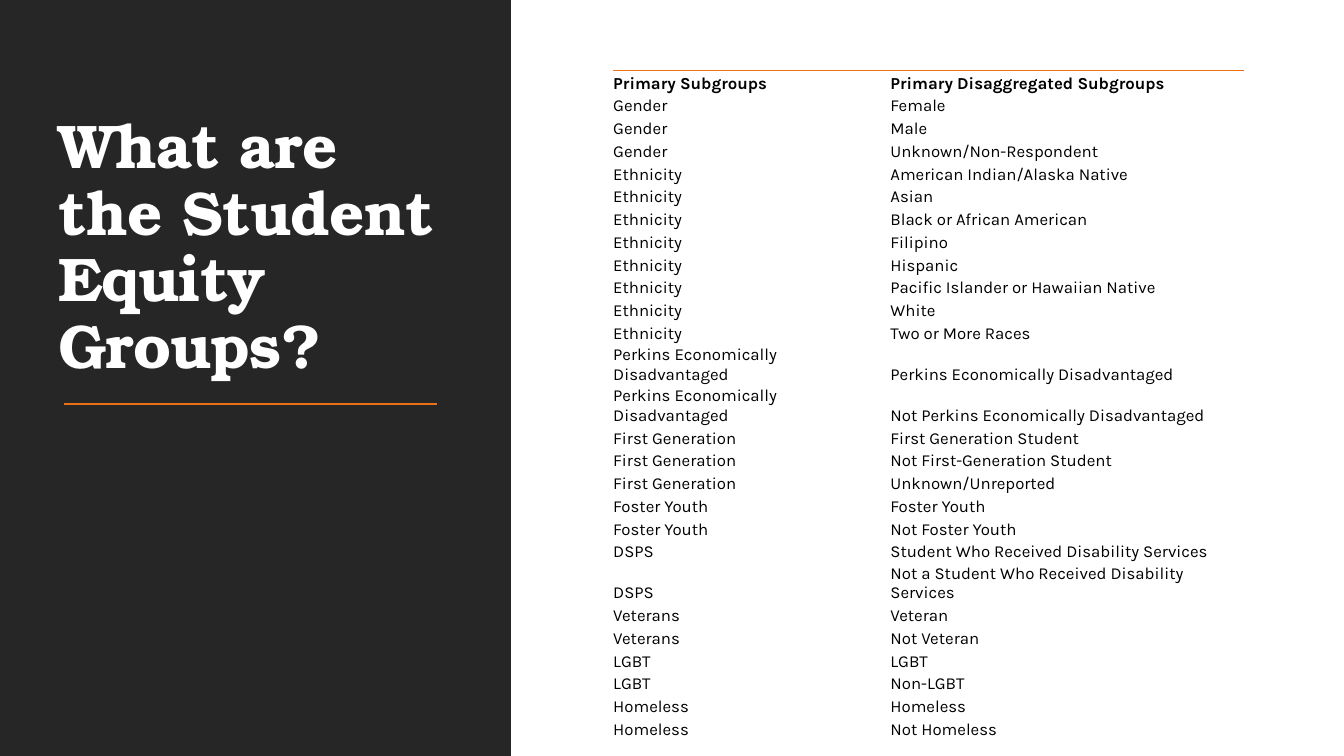
from dataclasses import dataclass

from lxml import etree
from pptx import Presentation
from pptx.dml.color import RGBColor
from pptx.enum.shapes import MSO_CONNECTOR, MSO_SHAPE
from pptx.enum.text import MSO_ANCHOR
from pptx.oxml.ns import qn
from pptx.slide import Slide
from pptx.table import _Cell
from pptx.text.text import _Paragraph
from pptx.util import Pt

STRAIGHT = MSO_CONNECTOR.STRAIGHT
RECTANGLE = MSO_SHAPE.RECTANGLE
BOTTOM = MSO_ANCHOR.BOTTOM

EMU_PER_PX = 6350
PAGE_WIDTH, PAGE_HEIGHT = 1920, 1080
CHARCOAL, ORANGE, WHITE, BLACK = "262626", "EC7016", "FFFFFF", "000000"
PLAIN_TABLE_STYLE = "{2D5ABB26-0587-4C30-8999-92F81FD0307C}"


@dataclass(frozen=True)
class Font:
    name: str
    size: int
    color: str
    bold: bool = False


@dataclass(frozen=True)
class Group:
    name: str
    members: tuple[str, ...]


TITLE_FONT = Font("TeX Gyre Bonum", 44, WHITE, True)
HEADER_FONT = Font("Karla", 12, BLACK, True)
BODY_FONT = Font("Karla", 12, BLACK)

HEADER = ("Primary Subgroups", "Primary Disaggregated Subgroups")
GROUPS = (
    Group("Gender", ("Female", "Male", "Unknown/Non-Respondent")),
    Group("Ethnicity", (
        "American Indian/Alaska Native",
        "Asian",
        "Black or African American",
        "Filipino",
        "Hispanic",
        "Pacific Islander or Hawaiian Native",
        "White",
        "Two or More Races",
    )),
    Group("Perkins Economically Disadvantaged", (
        "Perkins Economically Disadvantaged",
        "Not Perkins Economically Disadvantaged",
    )),
    Group("First Generation", (
        "First Generation Student",
        "Not First-Generation Student",
        "Unknown/Unreported",
    )),
    Group("Foster Youth", ("Foster Youth", "Not Foster Youth")),
    Group("DSPS", (
        "Student Who Received Disability Services",
        "Not a Student Who Received Disability Services",
    )),
    Group("Veterans", ("Veteran", "Not Veteran")),
    Group("LGBT", ("LGBT", "Non-LGBT")),
    Group("Homeless", ("Homeless", "Not Homeless")),
)


def px(length: int) -> int:
    return length * EMU_PER_PX


def color(value: str) -> RGBColor:
    return RGBColor.from_string(value)


def add_run(para: _Paragraph, text: str, font: Font, spacing: int = 0) -> None:
    span = para.add_run()
    span.text = text
    span.font.name = font.name
    span.font.size = Pt(font.size)
    span.font.bold = font.bold
    span.font.color.rgb = color(font.color)
    if spacing:
        span.font._element.set("spc", str(spacing))


def add_sidebar(page: Slide) -> None:
    panel = page.shapes.add_shape(RECTANGLE, px(-1), 0, px(731), px(PAGE_HEIGHT))
    panel.shadow.inherit = False
    panel.fill.solid()
    panel.fill.fore_color.rgb = color(CHARCOAL)
    panel.line.fill.background()


def add_title(page: Slide) -> None:
    box = page.shapes.add_textbox(px(69), px(101), px(576), px(451))
    frame = box.text_frame
    frame.word_wrap = True
    frame.vertical_anchor = BOTTOM
    para = frame.paragraphs[0]
    para.line_spacing = 0.9
    add_run(para, "What are the Student Equity Groups?", TITLE_FONT, -50)


def add_title_rule(page: Slide) -> None:
    rule = page.shapes.add_connector(STRAIGHT, px(91), px(577), px(624), px(577))
    rule.line.color.rgb = color(ORANGE)
    rule.line.width = Pt(1.5)
    etree.SubElement(rule._element.spPr, qn("a:effectLst"))


def add_top_border(cell: _Cell) -> None:
    border = etree.Element(qn("a:lnT"), w=str(Pt(0.75)))
    fill = etree.SubElement(border, qn("a:solidFill"))
    etree.SubElement(fill, qn("a:srgbClr"), val=ORANGE)
    cell._tc.get_or_add_tcPr().insert(0, border)


def fill_cell(cell: _Cell, text: str, font: Font) -> None:
    cell.fill.background()
    cell.vertical_anchor = BOTTOM
    cell.margin_left = cell.margin_bottom = 0
    cell.margin_right = cell.margin_top = px(1)
    add_run(cell.text_frame.paragraphs[0], text, font)


def add_group_table(page: Slide) -> None:
    rows = [HEADER] + [(group.name, member) for group in GROUPS for member in group.members]
    widths = (396, 505)
    table = page.shapes.add_table(
        len(rows), len(widths), px(876), px(101), px(sum(widths)), px(878)
    ).table
    table.first_row = table.horz_banding = False
    table._tbl.tblPr.find(qn("a:tableStyleId")).text = PLAIN_TABLE_STYLE
    for column, width in zip(table.columns, widths):
        column.width = px(width)
    for row_index, row in enumerate(rows):
        font = BODY_FONT if row_index else HEADER_FONT
        for column_index, text in enumerate(row):
            fill_cell(table.cell(row_index, column_index), text, font)
    for cell in table.rows[0].cells:
        add_top_border(cell)


def main() -> None:
    deck = Presentation()
    deck.slide_width, deck.slide_height = px(PAGE_WIDTH), px(PAGE_HEIGHT)
    page = deck.slides.add_slide(deck.slide_layouts[6])
    add_sidebar(page)
    add_title(page)
    add_title_rule(page)
    add_group_table(page)
    deck.save("out.pptx")


if __name__ == "__main__":
    main()
